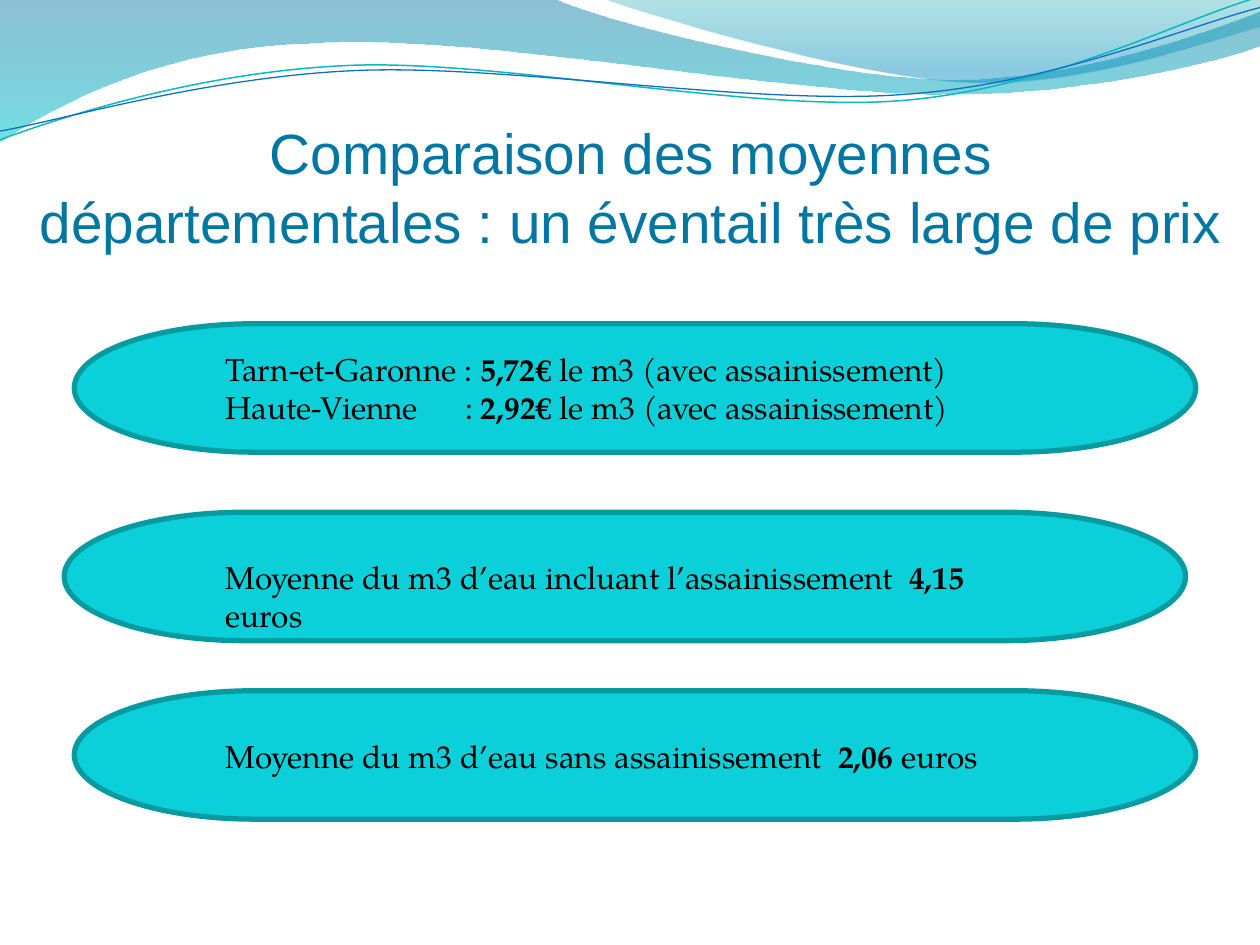
"""Build the slide comparing average water prices by department."""
from math import cos, radians, sin
from typing import NamedTuple

from lxml import etree
from pptx import Presentation
from pptx.dml.color import RGBColor
from pptx.enum.shapes import MSO_SHAPE
from pptx.enum.text import MSO_ANCHOR, MSO_AUTO_SIZE, PP_ALIGN
from pptx.oxml.ns import qn
from pptx.util import Pt

TERMINATOR = MSO_SHAPE.FLOWCHART_TERMINATOR
BOTTOM = MSO_ANCHOR.BOTTOM
CENTER = PP_ALIGN.CENTER
NO_FIT = MSO_AUTO_SIZE.NONE
GROW = MSO_AUTO_SIZE.SHAPE_TO_FIT_TEXT
COLON_TAB = 137


class Stop(NamedTuple):
    position: float
    color: str
    opacity: int


class Wave(NamedTuple):
    box: tuple
    start: tuple
    steps: list
    stops: tuple = ()
    color: str = ""
    weight: float = 0
    rotation: float = 0


class Price(NamedTuple):
    label: str
    value: str
    unit: str


class Banner(NamedTuple):
    left: float
    top: float
    text_top: float
    text_width: float
    text_height: float
    prices: list


WAVES = [
    Wave((-0.7, -0.7, 721.4, 82.1), (0, 0), [
        (316.8, -0.7),
        (342.7, 12.2, 478.1, 45.4, 545.8, 45.4),
        (614.2, 45.4, 689.8, 18.7, 720, 6.5),
        (720.7, 25.9),
        (707.8, 31.7, 626.4, 54.7, 537.1, 54),
        (447.8, 54, 275, 20.2, 185, 24.5),
        (92.9, 25.9, 33.1, 59.8, -0.7, 81.4),
        (0, 0),
    ], stops=(Stop(0, "0074A1", 45), Stop(1, "00C6CF", 55))),
    Wave((344.9, -0.7, 375.1, 50.4), (344.9, -0.7), [
        (366.5, 7.9, 491, 44.6, 553.7, 46.8),
        (616.3, 49.7, 691.9, 23, 720, 15.1),
        (720, 0),
        (344.9, -0.7),
    ], stops=(Stop(0, "00A1A9", 30), Stop(0.8, "008BBF", 45))),
    Wave((-1.4, 15.8, 721.4, 51.1), (0, 79.9), [
        (34.6, 67, 113.8, 41, 199.4, 37.4),
        (284.4, 33.8, 427, 64.1, 513.4, 57.6),
        (599.8, 51.1, 675.4, 10.8, 718.6, -1.4),
    ], color="0AB8BF", weight=0.85, rotation=357.3),
    Wave((-1.4, 21.6, 722.2, 41.8), (0, 74.9), [
        (33.8, 69.1, 118.1, 43.9, 203.8, 40.3),
        (290.2, 36.7, 429.8, 60.5, 516.2, 54),
        (601.9, 48.2, 677.5, 15.1, 720, 4.3),
    ], color="0F6FC6", weight=0.75, rotation=357.3),
]

BANNERS = [
    Banner(36.7, 292.7, 315.4, 481.7, 28.8, [
        Price("Moyenne du m3 d’eau incluant l’assainissement  ", "4,15", " euros")]),
    Banner(42.5, 394.7, 417.6, 504.7, 28.8, [
        Price("Moyenne du m3 d’eau sans assainissement  ", "2,06", " euros")]),
    Banner(42.5, 185, 196.6, 442, 51, [
        Price("Tarn-et-Garonne : ", "5,72€", " le m3 (avec assainissement)"),
        Price("Haute-Vienne\t: ", "2,92€ ", "le m3 (avec assainissement)")]),
]


def rgb(color: str) -> RGBColor:
    return RGBColor.from_string(color)


def add_segment(geom, tag: str, coords: tuple, wave: Wave) -> None:
    left, top, width, height = wave.box
    angle = radians(-wave.rotation)
    segment = etree.SubElement(geom, qn(tag))
    for x, y in zip(coords[::2], coords[1::2]):
        dx, dy = x - left - width / 2, y - top - height / 2
        local_x = dx * cos(angle) - dy * sin(angle) + width / 2
        local_y = dx * sin(angle) + dy * cos(angle) + height / 2
        etree.SubElement(segment, qn("a:pt"), x=str(Pt(local_x)), y=str(Pt(local_y)))


def add_wave(shapes, wave: Wave) -> None:
    builder = shapes.build_freeform(Pt(wave.start[0]), Pt(wave.start[1]))
    builder.add_line_segments([(Pt(s[-2]), Pt(s[-1])) for s in wave.steps], close=False)
    sp = builder.convert_to_shape()
    sp.left, sp.top, sp.width, sp.height = map(Pt, wave.box)
    sp.rotation = wave.rotation
    sp.shadow.inherit = False

    geom = next(sp._element.iter(qn("a:path")))
    geom.clear()
    geom.set("w", str(sp.width))
    geom.set("h", str(sp.height))
    add_segment(geom, "a:moveTo", wave.start, wave)
    for step in wave.steps:
        add_segment(geom, "a:lnTo" if len(step) == 2 else "a:cubicBezTo", step, wave)

    if not wave.stops:
        sp.fill.background()
        sp.line.color.rgb = rgb(wave.color)
        sp.line.width = Pt(wave.weight)
        return
    etree.SubElement(geom, qn("a:close"))
    sp.line.fill.background()
    sp.fill.gradient()
    sp.fill.gradient_angle = 270
    for gs, stop in zip(sp.fill.gradient_stops, wave.stops):
        gs.position = stop.position
        gs.color.rgb = rgb(stop.color)
    colors = sp._element.spPr.iter(qn("a:srgbClr"))
    for clr, stop in zip(colors, wave.stops):
        etree.SubElement(clr, qn("a:alpha"), val=str(stop.opacity * 1000))


def add_run(p, text: str, font: str, size: float, color: str, bold: bool = False) -> None:
    r = p.add_run()
    r.text = text
    r.font.name = font
    r.font.size = Pt(size)
    r.font.bold = bold
    r.font.color.rgb = rgb(color)


def set_title(title) -> None:
    title.left, title.top, title.width, title.height = Pt(20.2), Pt(55.4), Pt(680.4), Pt(90)
    tf = title.text_frame
    tf.word_wrap = True
    tf.auto_size = NO_FIT
    tf.vertical_anchor = BOTTOM
    tf.margin_left = tf.margin_right = tf.margin_bottom = 0
    p = tf.paragraphs[0]
    p.alignment = CENTER
    add_run(p, "Comparaison des moyennes départementales : un éventail très large de prix",
            "Arial", 32.4, "0076A3")


def add_banner(shapes, banner: Banner) -> None:
    sp = shapes.add_shape(TERMINATOR, Pt(banner.left), Pt(banner.top), Pt(640.8), Pt(73.4))
    sp.shadow.inherit = False
    sp.fill.solid()
    sp.fill.fore_color.rgb = rgb("0BD0D9")
    sp.line.color.rgb = rgb("089AA1")
    sp.line.width = Pt(3)

    box = shapes.add_textbox(Pt(121.7), Pt(banner.text_top),
                             Pt(banner.text_width), Pt(banner.text_height))
    tf = box.text_frame
    tf.word_wrap = True
    tf.auto_size = GROW
    for i, price in enumerate(banner.prices):
        p = tf.add_paragraph() if i else tf.paragraphs[0]
        if "\t" in price.label:
            tabs = etree.SubElement(p._p.get_or_add_pPr(), qn("a:tabLst"))
            etree.SubElement(tabs, qn("a:tab"), pos=str(Pt(COLON_TAB)), algn="l")
        for text in price:
            add_run(p, text, "TeX Gyre Pagella", 18, "000000", bold=text == price.value)


def main() -> None:
    prs = Presentation()
    prs.slide_width, prs.slide_height = Pt(720), Pt(540)
    slide = prs.slides.add_slide(prs.slide_layouts[5])
    shapes = slide.shapes
    title = shapes.title
    for wave in WAVES:
        add_wave(shapes, wave)
    shapes._spTree.append(title._element)
    set_title(title)
    for banner in BANNERS:
        add_banner(shapes, banner)
    prs.save("out.pptx")


if __name__ == "__main__":
    main()
